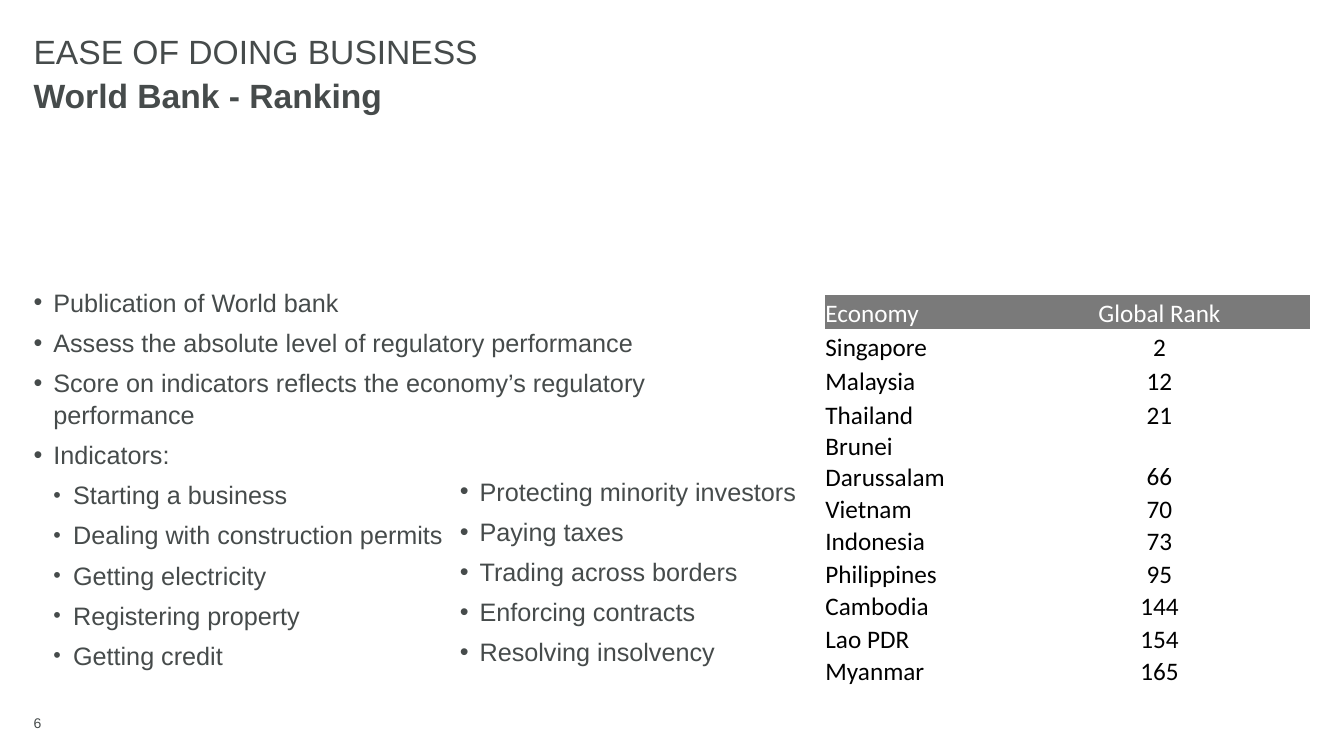
from dataclasses import dataclass

from lxml import etree
from pptx import Presentation
from pptx.dml.color import RGBColor
from pptx.enum.text import MSO_ANCHOR, PP_ALIGN
from pptx.oxml.ns import qn
from pptx.util import Pt

LEFT, CENTER = PP_ALIGN.LEFT, PP_ALIGN.CENTER
TOP, MIDDLE, BOTTOM = MSO_ANCHOR.TOP, MSO_ANCHOR.MIDDLE, MSO_ANCHOR.BOTTOM
NO_STYLE = "{2D5ABB26-0587-4C30-8999-92F81FD0307C}"
INDENT = 14.1


@dataclass(frozen=True)
class Theme:
    text: RGBColor = RGBColor(0x46, 0x4B, 0x4B)
    header: RGBColor = RGBColor(0x7A, 0x7A, 0x7A)
    white: RGBColor = RGBColor(0xFF, 0xFF, 0xFF)
    black: RGBColor = RGBColor(0, 0, 0)
    font: str = "Arial"
    table_font: str = "Calibri"
    title: int = 24
    body: int = 18
    small: int = 10


THEME = Theme()

TOPICS = [
    ("Publication of World bank", 0),
    ("Assess the absolute level of regulatory performance", 0),
    ("Score on indicators reflects the economy’s regulatory performance", 0),
    ("Indicators:", 0),
    ("Starting a business", 1),
    ("Dealing with construction permits", 1),
    ("Getting electricity", 1),
    ("Registering property", 1),
    ("Getting credit", 1),
]
MORE_INDICATORS = [
    ("Protecting minority investors", 0),
    ("Paying taxes", 0),
    ("Trading across borders", 0),
    ("Enforcing contracts", 0),
    ("Resolving insolvency", 0),
]
RANKING = [
    ("Economy", "Global Rank"),
    ("Singapore", "2"),
    ("Malaysia", "12"),
    ("Thailand", "21"),
    ("Brunei Darussalam", "66"),
    ("Vietnam", "70"),
    ("Indonesia", "73"),
    ("Philippines", "95"),
    ("Cambodia", "144"),
    ("Lao PDR", "154"),
    ("Myanmar", "165"),
]


def write(p, text, size=THEME.body, font=THEME.font, color=THEME.text,
          bold=False, align=LEFT, spacing=1.0, after=0):
    p.alignment, p.line_spacing, p.space_after = align, spacing, Pt(after)
    r = p.add_run()
    r.text = text
    r.font.size, r.font.name, r.font.bold = Pt(size), font, bold
    r.font.color.rgb = color


def add_box(s, box, anchor=TOP):
    tf = s.shapes.add_textbox(*map(Pt, box)).text_frame
    tf.word_wrap, tf.vertical_anchor = True, anchor
    tf.margin_left = tf.margin_right = tf.margin_top = tf.margin_bottom = 0
    return tf


def add_bullet(p, level):
    pPr = p._p.get_or_add_pPr()
    pPr.set("marL", str(Pt(INDENT * (level + 1))))
    pPr.set("indent", str(-Pt(INDENT)))
    if level:
        p.level = level
        etree.SubElement(pPr, qn("a:buSzPct")).set("val", "85000")
    etree.SubElement(pPr, qn("a:buFont")).set("typeface", THEME.font)
    etree.SubElement(pPr, qn("a:buChar")).set("char", "•")


def add_heading(s, box):
    x, y, w, h = box
    line = 28
    write(add_box(s, (x, y, w, line), MIDDLE).paragraphs[0],
          "EASE OF DOING BUSINESS", size=THEME.title, spacing=0.9)
    write(add_box(s, (x, y + h - line, w, line), MIDDLE).paragraphs[0],
          "World Bank - Ranking", size=THEME.title, bold=True, spacing=1.05, after=6)


def add_list(s, box, items):
    tf = add_box(s, box)
    for i, (text, level) in enumerate(items):
        p = tf.add_paragraph() if i else tf.paragraphs[0]
        add_bullet(p, level)
        write(p, text, spacing=1.05, after=6)


def add_ranking(s, box):
    x, y, w, h = box
    frame = s.shapes.add_table(len(RANKING), 2, Pt(x), Pt(y), Pt(w), Pt(h))
    table = frame.table
    table.horz_banding = False
    for style in frame.element.iter(qn("a:tableStyleId")):
        style.text = NO_STYLE
    for column, share in zip(table.columns, (0.38, 0.62)):
        column.width = Pt(w * share)
    for i, values in enumerate(RANKING):
        table.rows[i].height = Pt(24.3 if i < 4 else 23.2)
        for cell, value, align in zip(table.rows[i].cells, values, (LEFT, CENTER)):
            if i:
                cell.fill.background()
            else:
                cell.fill.solid()
                cell.fill.fore_color.rgb = THEME.header
            cell.margin_left = cell.margin_right = cell.margin_top = Pt(0.6)
            cell.margin_bottom = 0
            cell.vertical_anchor = BOTTOM
            write(cell.text_frame.paragraphs[0], value, font=THEME.table_font,
                  color=THEME.black if i else THEME.white, align=align)


def add_page_number(s, box):
    write(add_box(s, box, MIDDLE).paragraphs[0], "6", size=THEME.small)


def main():
    prs = Presentation()
    prs.slide_width, prs.slide_height = Pt(960), Pt(540)
    s = prs.slides.add_slide(prs.slide_layouts[6])
    add_heading(s, (24, 24, 445, 57.5))
    add_list(s, (24, 204, 445, 243), TOPICS)
    add_ranking(s, (589, 210.8, 346.7, 259.6))
    add_page_number(s, (24, 505.5, 70, 21.6))
    add_list(s, (328.5, 339, 255, 150), MORE_INDICATORS)
    prs.save("out.pptx")


if __name__ == "__main__":
    main()
